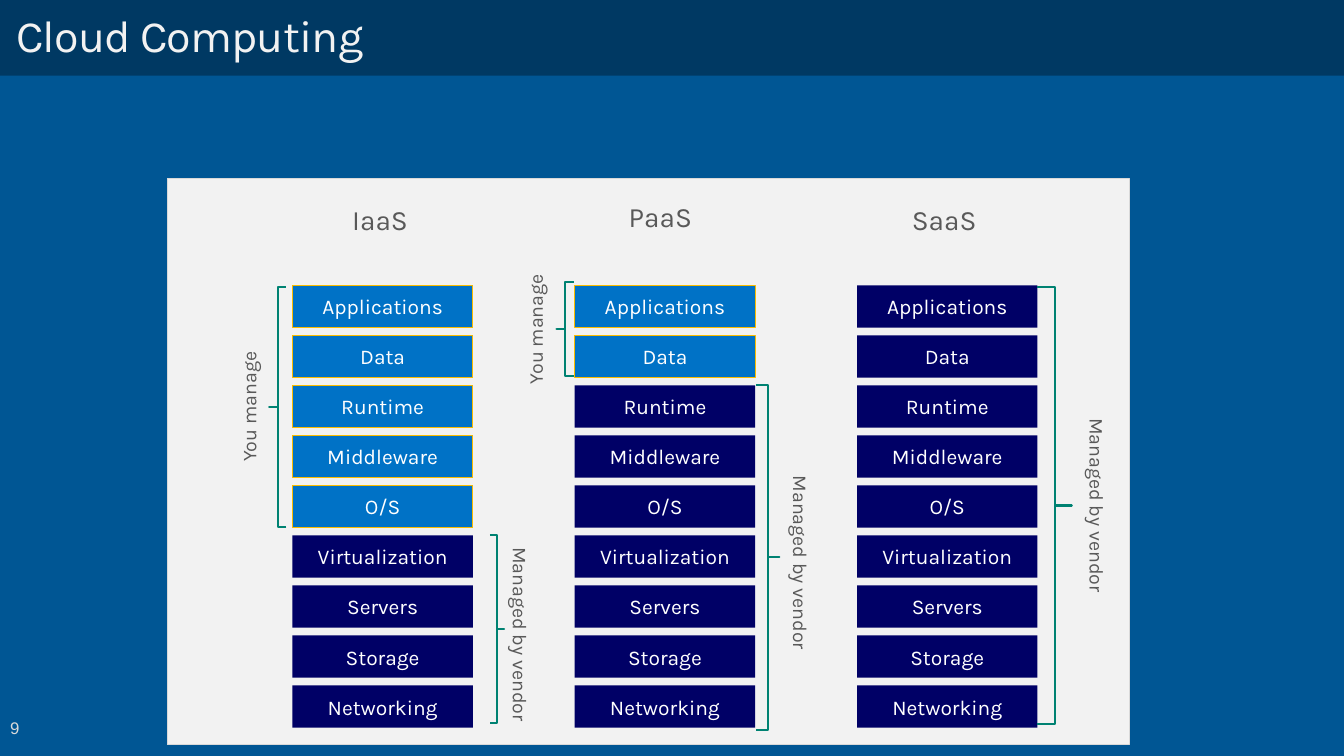
from pptx import Presentation
from pptx.dml.color import RGBColor
from pptx.enum.shapes import MSO_SHAPE
from pptx.enum.text import MSO_ANCHOR, PP_ALIGN
from pptx.util import Inches, Pt

BLUE = RGBColor(0x00, 0x56, 0x94)
TITLE_BLUE = RGBColor(0x00, 0x39, 0x63)
PANEL_GREY = RGBColor(0xF2, 0xF2, 0xF2)
BORDER_GREY = RGBColor(0xD9, 0xD9, 0xD9)
TEXT_GREY = RGBColor(0x59, 0x59, 0x59)
NAVY = RGBColor(0x00, 0x00, 0x66)
BRIGHT_BLUE = RGBColor(0x00, 0x72, 0xC6)
GOLD = RGBColor(0xF9, 0xBC, 0x00)
TEAL = RGBColor(0x00, 0x82, 0x72)
WHITE = RGBColor(0xFF, 0xFF, 0xFF)

LAYERS = ["Applications", "Data", "Runtime", "Middleware", "O/S",
          "Virtualization", "Servers", "Storage", "Networking"]
COLUMN_LEFT, COLUMN_PITCH = 2.9, 2.8
ROW_TOP, ROW_PITCH = 2.83, 3.97 / 8
BLOCK_W, BLOCK_H = 1.79, 0.42


class SlideBuilder:
    """Holds the text style and the slide being filled."""

    font = "Karla"

    def __init__(self, slide, background):
        self.slide = slide
        slide.background.fill.solid()
        slide.background.fill.fore_color.rgb = background

    def set_text(self, s, text, size, color, align=PP_ALIGN.CENTER,
                 anchor=MSO_ANCHOR.MIDDLE, inset=(0, 0.05), font=None, wrap=True):
        tf = s.text_frame
        tf.text = text
        tf.word_wrap = wrap
        tf.vertical_anchor = anchor
        tf.margin_left = tf.margin_right = Inches(inset[0])
        tf.margin_top = tf.margin_bottom = Inches(inset[1])
        p = tf.paragraphs[0]
        p.alignment = align
        r = p.runs[0]
        r.font.name = font or self.font
        r.font.size = Pt(size)
        r.font.color.rgb = color
        return p

    def shape(self, kind, box, fill=None, line=None, width=0.75):
        s = self.slide.shapes.add_shape(kind, *map(Inches, box))
        s.shadow.inherit = False
        if fill is None:
            s.fill.background()
        else:
            s.fill.solid()
            s.fill.fore_color.rgb = fill
        if line is None:
            s.line.fill.background()
        else:
            s.line.color.rgb = line
            s.line.width = Pt(width)
        return s

    def rect(self, box, fill, line=None):
        return self.shape(MSO_SHAPE.RECTANGLE, box, fill, line)

    def text(self, box, text, size, color, **style):
        s = self.slide.shapes.add_textbox(*map(Inches, box))
        return self.set_text(s, text, size, color, **style)

    def bracket(self, kind, box):
        s = self.shape(kind, box, line=TEAL, width=1.5)
        s.adjustments[0] = 0
        s.adjustments[1] = 0.5

    def side_label(self, box, text, direction):
        s = self.slide.shapes.add_textbox(*map(Inches, box))
        self.set_text(s, text, 14, TEXT_GREY, anchor=MSO_ANCHOR.TOP,
                      inset=(0.1, 0.05), wrap=False)
        s.element.txBody.bodyPr.set("vert", direction)

    def you_manage(self, bracket, label):
        self.bracket(MSO_SHAPE.LEFT_BRACE, bracket)
        self.side_label((*label, 0.44, 1.17), "You manage", "vert270")

    def managed_by_vendor(self, bracket, label):
        self.bracket(MSO_SHAPE.RIGHT_BRACE, bracket)
        self.side_label((*label, 0.44, 1.85), "Managed by vendor", "eaVert")

    def stack(self, left, own_layers):
        for row, layer in enumerate(LAYERS):
            box = (left, ROW_TOP + row * ROW_PITCH, BLOCK_W, BLOCK_H)
            own = row < own_layers
            s = self.rect(box, BRIGHT_BLUE if own else NAVY, GOLD if own else None)
            self.set_text(s, layer, 15, WHITE)


def main():
    prs = Presentation()
    prs.slide_width, prs.slide_height = Inches(13.33), Inches(7.5)
    b = SlideBuilder(prs.slides.add_slide(prs.slide_layouts[6]), BLUE)

    # Slide number, title bar and panel
    p = b.text((0.1, 7.14, 0.21, 0.18), "9", 12, BORDER_GREY, inset=(0, 0),
               align=PP_ALIGN.LEFT, anchor=MSO_ANCHOR.TOP, font="Arial", wrap=False)
    p.line_spacing = 0.9
    title = b.rect((0, 0, 13.33, 0.75), TITLE_BLUE)
    p = b.set_text(title, "Cloud Computing", 32, PANEL_GREY,
                   align=PP_ALIGN.LEFT, inset=(0.16, 0.1))
    p.line_spacing = 0.9
    p.runs[0].font._element.set("spc", "-60")
    b.rect((1.66, 1.77, 9.54, 5.62), PANEL_GREY, BORDER_GREY)

    # Service models: heading, its box, number of layers you manage
    models = [("IaaS", (2.87, 2.01, 1.8, 0.56), 5),
              ("PaaS", (5.61, 1.98, 1.88, 0.7), 2),
              ("SaaS", (8.43, 2.01, 1.87, 0.67), 0)]
    for column, (name, box, own_layers) in enumerate(models):
        p = b.text(box, name, 20, TEXT_GREY, anchor=MSO_ANCHOR.TOP, inset=(0.1, 0))
        p.space_before = Pt(4)
        b.stack(COLUMN_LEFT + column * COLUMN_PITCH, own_layers)

    # Responsibility brackets with their labels
    b.you_manage((2.67, 2.85, 0.17, 2.38), (2.3, 3.45))
    b.you_manage((5.52, 2.8, 0.17, 0.93), (5.14, 2.68))
    b.managed_by_vendor((4.86, 5.31, 0.14, 1.86), (4.89, 5.33))
    b.managed_by_vendor((7.5, 3.82, 0.23, 3.42), (7.67, 4.62))
    b.managed_by_vendor((10.29, 2.85, 0.34, 4.33), (10.61, 4.05))

    prs.save("out.pptx")


if __name__ == "__main__":
    main()
